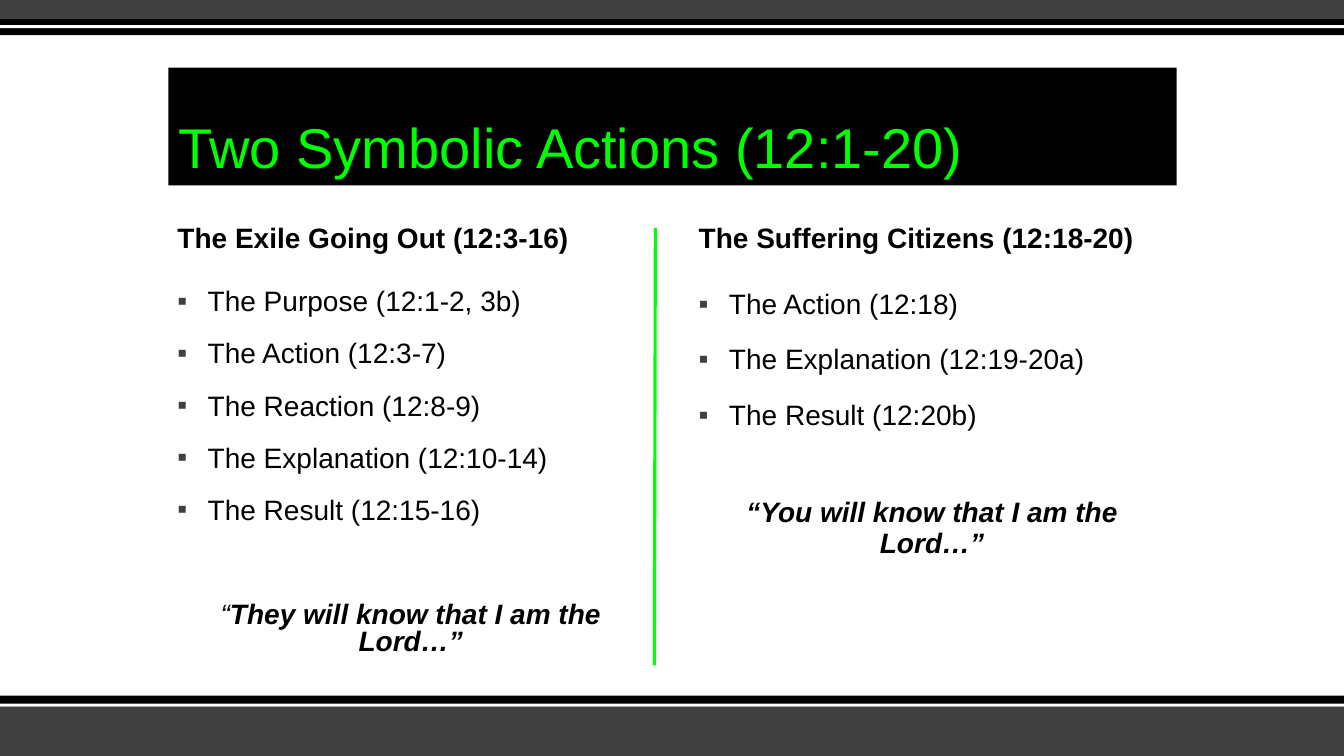
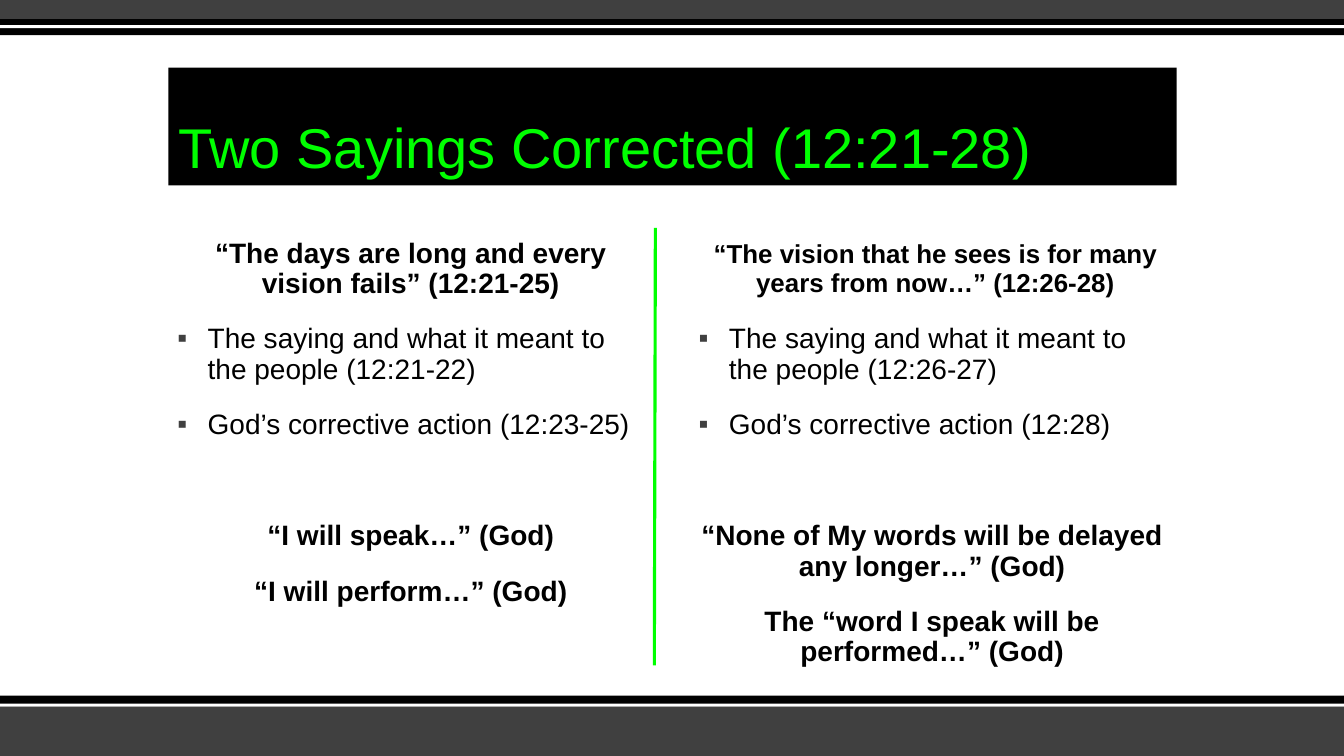
import pptx
import pptx.util
import pptx.dml.color
import pptx.enum.shapes
import pptx.enum.text
import pptx.oxml.ns
from lxml import etree

Inches, Pt = pptx.util.Inches, pptx.util.Pt
ALIGN, ANCHOR = pptx.enum.text.PP_ALIGN, pptx.enum.text.MSO_ANCHOR
qn = pptx.oxml.ns.qn

# Content: quotes are paragraphs made of (text, style) runs
SLIDES = [
    {
        "title": "Two Symbolic Actions (12:1-20)",
        "head_top": 2, "body_top": 2.83, "head_align": ALIGN.LEFT,
        "columns": [
            {"head": "The Exile Going Out (12:3-16)",
             "points": ["The Purpose (12:1-2, 3b)", "The Action (12:3-7)",
                        "The Reaction (12:8-9)", "The Explanation (12:10-14)",
                        "The Result (12:15-16)"],
             "quotes": [[("“", "i"), ("They will know that I am the Lord…”", "bi")]],
             "height": 3.75, "spacing": 0.8, "quote_gap": 55},
            {"head": "The Suffering Citizens (12:18-20)",
             "points": ["The Action (12:18)", "The Explanation (12:19-20a)",
                        "The Result (12:20b)"],
             "quotes": [[("“You will know that I am the Lord…”", "bi")]],
             "height": 3.75, "quote_gap": 48},
        ],
    },
    {
        "title": "Two Sayings Corrected (12:21-28)",
        "head_top": 2.3, "body_top": 3.17, "head_align": ALIGN.CENTER,
        "columns": [
            {"head": "“The days are long and every vision fails” (12:21-25)",
             "points": ["The saying and what it meant to the people (12:21-22)",
                        "God’s corrective action (12:23-25)"],
             "quotes": [[("“I will speak…” (God)", "b")],
                        [("“I will perform…” (God)", "b")]],
             "height": 3.42, "quote_gap": 58},
            {"head": "“The vision that he sees is for many years from now…” (12:26-28)",
             "head_size": 18.5, "head_left": 6.86,
             "points": ["The saying and what it meant to the people (12:26-27)",
                        "God’s corrective action (12:28)"],
             "quotes": [[("“None of My words will be delayed any longer…” (God)", "b")],
                        [("The “word I speak will be performed…” (God)", "b")]],
             "height": 3.75, "quote_gap": 58},
        ],
    },
]

# Shared style
COLORS = {"black": "000000", "gray": "404040", "white": "FFFFFF", "green": "00FF00"}
FONT = "Arial"
WIDTH, HEIGHT = 13.33, 7.5
COLUMN_LEFTS, COLUMN_WIDTH, HEAD_HEIGHT = (1.66, 6.83), 4.83, 0.75
BANDS = [  # top, height, colour
    (7, 0.5, "gray"), (6.9, 0.11, "black"), (6.98, 0.03, "white"),
    (0, 0.19, "gray"), (0.19, 0.16, "black"), (0.25, 0.03, "white"),
]


def rgb(name):
    return pptx.dml.color.RGBColor.from_string(COLORS[name])


def place(sp, left, top, width, height, anchor):
    sp.left, sp.top, sp.width, sp.height = map(Inches, (left, top, width, height))
    tf = sp.text_frame
    tf.word_wrap = True
    tf.auto_size = pptx.enum.text.MSO_AUTO_SIZE.NONE
    tf.vertical_anchor = anchor
    return tf


def write(tf, text, style="", size=20, color="black", align=ALIGN.LEFT,
          spacing=0.9, before=0, bullet=False):
    """Add a paragraph; text is a string or a list of (text, style) runs."""
    p = tf.paragraphs[0] if not tf.text else tf.add_paragraph()
    p.alignment, p.line_spacing, p.space_before = align, spacing, Pt(before)
    for words, run_style in ([(text, style)] if isinstance(text, str) else text):
        r = p.add_run()
        r.text = words
        r.font.name, r.font.size = FONT, Pt(size)
        r.font.color.rgb = rgb(color)
        r.font.bold, r.font.italic = "b" in run_style, "i" in run_style
    # Bullet and indent
    pPr = p._p.get_or_add_pPr()
    indent = Inches(0.3) if bullet else 0
    pPr.set("marL", str(indent))
    pPr.set("indent", str(-indent))
    if bullet:
        clr = etree.SubElement(pPr, qn("a:buClr"))
        etree.SubElement(clr, qn("a:srgbClr"), val=COLORS["gray"])
        etree.SubElement(pPr, qn("a:buFont"), typeface=FONT)
        etree.SubElement(pPr, qn("a:buChar"), char="▪")
    else:
        etree.SubElement(pPr, qn("a:buNone"))


def add_master_bands(prs, s):
    """Draw the bands on a slide, then move them behind everything on the master."""
    bands = []
    for top, height, color in BANDS:
        sp = s.shapes.add_shape(pptx.enum.shapes.MSO_SHAPE.RECTANGLE, 0, Inches(top),
                                prs.slide_width, Inches(height))
        sp.shadow.inherit = False
        sp.fill.solid()
        sp.fill.fore_color.rgb = rgb(color)
        sp.line.fill.background()
        bands.append(sp.element)
    for i, band in enumerate(bands):
        prs.slide_master.shapes.element.insert(2 + i, band)


def add_divider(s):
    line = s.shapes.add_connector(pptx.enum.shapes.MSO_CONNECTOR.STRAIGHT,
                                  Inches(6.5), Inches(2.26), Inches(6.49), Inches(6.6))
    line.line.color.rgb = rgb("green")
    line.line.width = Pt(2.25)
    etree.SubElement(line.element.spPr, qn("a:effectLst"))


def fill_slide(s, data):
    # Title
    title = s.shapes.title
    tf = place(title, 1.67, 0.67, 10, 1.17, ANCHOR.BOTTOM)
    title.fill.solid()
    title.fill.fore_color.rgb = rgb("black")
    write(tf, data["title"], size=40, color="green")
    # Columns: heading placeholders 1 and 3, list placeholders 2 and 4
    boxes = {sp.placeholder_format.idx: sp for sp in s.placeholders}
    for i, (left, col) in enumerate(zip(COLUMN_LEFTS, data["columns"])):
        tf = place(boxes[2 * i + 1], col.get("head_left", left), data["head_top"],
                   COLUMN_WIDTH, HEAD_HEIGHT, ANCHOR.MIDDLE)
        write(tf, col["head"], style="b", size=col.get("head_size", 20),
              align=data["head_align"])
        tf = place(boxes[2 * i + 2], left, data["body_top"], COLUMN_WIDTH,
                   col["height"], ANCHOR.TOP)
        spacing = col.get("spacing", 0.9)
        for point in col["points"]:
            write(tf, point, spacing=spacing, before=18, bullet=True)
        for n, quote in enumerate(col["quotes"]):
            write(tf, quote, align=ALIGN.CENTER, spacing=spacing,
                  before=18 if n else col["quote_gap"])
    add_divider(s)


def main():
    prs = pptx.Presentation()
    prs.slide_width, prs.slide_height = Inches(WIDTH), Inches(HEIGHT)
    comparison = prs.slide_layouts.get_by_name("Comparison")
    for n, data in enumerate(SLIDES):
        s = prs.slides.add_slide(comparison)
        if n == 0:
            add_master_bands(prs, s)
        fill_slide(s, data)
    prs.save("out.pptx")


if __name__ == "__main__":
    main()
